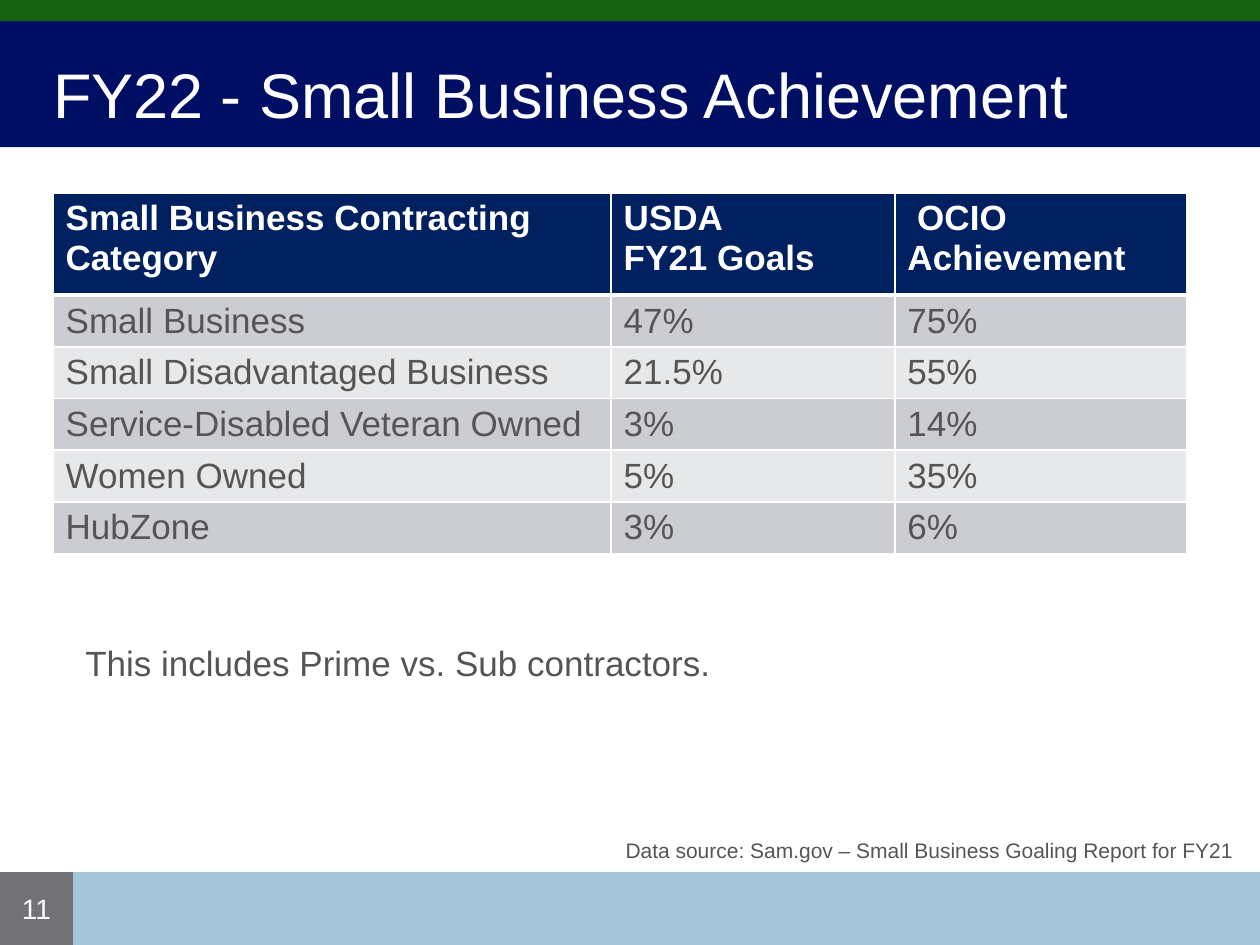
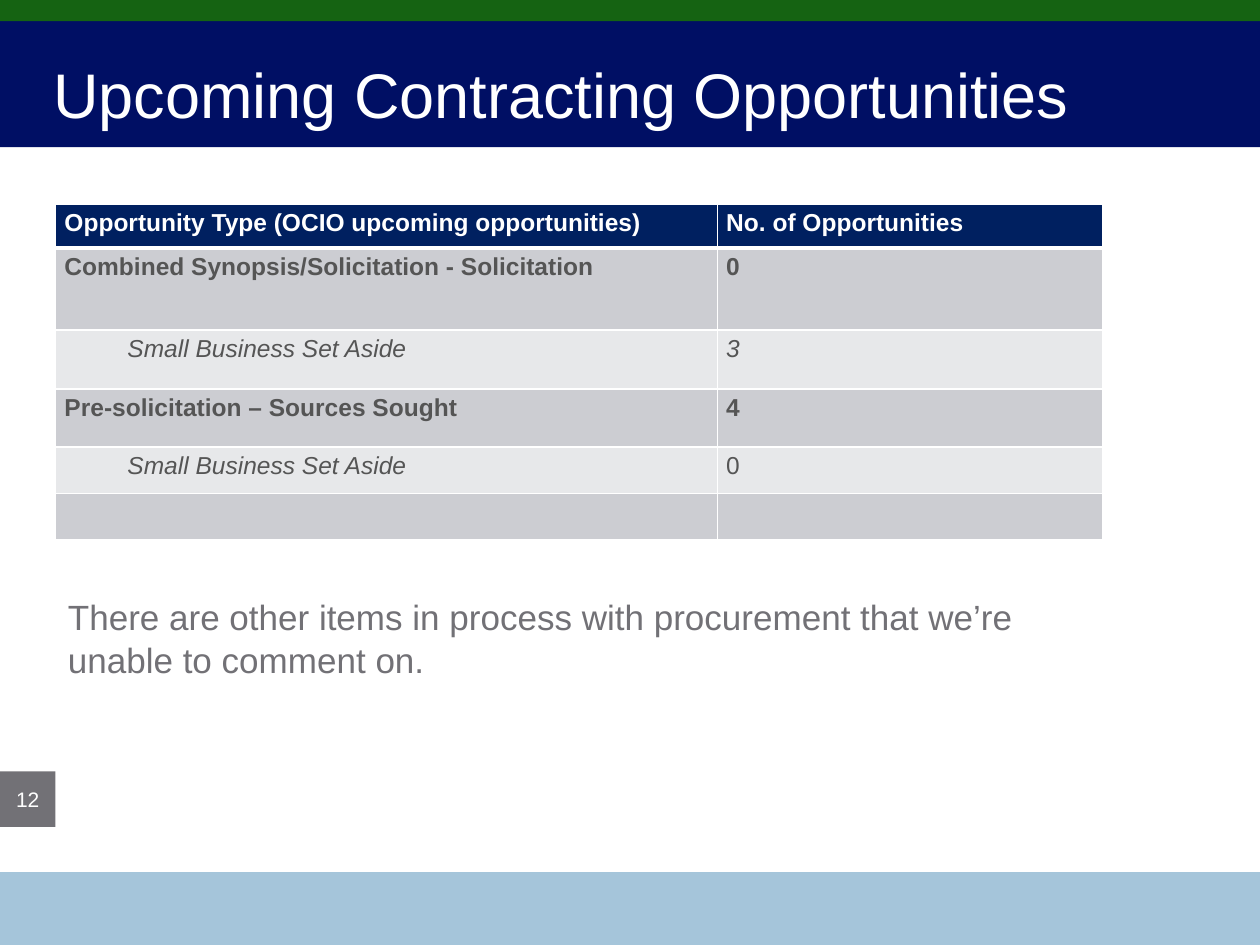
from lxml import etree
from pptx import Presentation
from pptx.dml.color import RGBColor
from pptx.enum.shapes import MSO_SHAPE as Shape
from pptx.enum.text import MSO_ANCHOR as Anchor, PP_ALIGN as Align
from pptx.oxml.ns import qn
from pptx.util import Cm, Pt

FONT = "Arial"
COLORS = {
    "white": "FFFFFF",
    "title_band": "000F64",
    "top_stripe": "156312",
    "footer_band": "A5C5DA",
    "header_row": "002060",
    "odd_row": "CCCDD2",
    "even_row": "E7E8EA",
    "table_text": "555555",
    "note_text": "545555",
    "gray": "727176",
}
PAGE_WIDTH, PAGE_HEIGHT = 25.4, 19.05
FOOTER_HEIGHT = 1.47
FOOTER_TOP = PAGE_HEIGHT - FOOTER_HEIGHT

GOALS = [
    ("Small Business Contracting Category", "USDA\nFY21 Goals", " OCIO Achievement"),
    ("Small Business", "47%", "75%"),
    ("Small Disadvantaged Business", "21.5%", "55%"),
    ("Service-Disabled Veteran Owned", "3%", "14%"),
    ("Women Owned", "5%", "35%"),
    ("HubZone", "3%", "6%"),
]
OPPORTUNITIES = [
    ("Opportunity Type (OCIO upcoming opportunities)", "No. of Opportunities"),
    ("Combined Synopsis/Solicitation - Solicitation", "0"),
    ("Small Business Set Aside", "3"),
    ("Pre-solicitation – Sources Sought", "4"),
    ("Small Business Set Aside", "0"),
    ("", ""),
]


def color(name):
    return RGBColor.from_string(COLORS[name])


def style_text(frame, size, color_name, bold=False, italic=False, align=Align.LEFT):
    for para in frame.paragraphs:
        para.alignment = align
        font = para.font
        font.name, font.size = FONT, Pt(size)
        font.bold, font.italic = bold, italic
        font.color.rgb = color(color_name)


def add_block(page, left, top, width, height, fill):
    block = page.shapes.add_shape(
        Shape.RECTANGLE, Cm(left), Cm(top), Cm(width), Cm(height))
    block.shadow.inherit = False
    block.fill.solid()
    block.fill.fore_color.rgb = color(fill)
    block.line.fill.background()
    return block


def move_bands_to_layout(page):
    """Draw the bands shared by all slides and put them behind the layout's content."""
    bands = [
        add_block(page, 0, 0, PAGE_WIDTH, 2.97, "title_band"),
        add_block(page, 0, FOOTER_TOP, PAGE_WIDTH, FOOTER_HEIGHT, "footer_band"),
        add_block(page, 0, 0, PAGE_WIDTH, 0.43, "top_stripe"),
    ]
    tree = page.slide_layout.shapes.element
    for position, band in enumerate(bands, start=2):
        tree.insert(position, band.element)


def add_page(deck, layout, title):
    page = deck.slides.add_slide(layout)
    box = page.shapes.title
    box.left, box.top, box.width, box.height = Cm(1.07), Cm(0.61), Cm(23.06), Cm(2.54)
    frame = box.text_frame
    frame.text = title
    frame.margin_left = frame.margin_right = 0
    frame.vertical_anchor = Anchor.MIDDLE
    style_text(frame, 36, "white")
    return page


def add_text(page, left, top, width, height, text, size, color_name, align=Align.LEFT):
    box = page.shapes.add_textbox(Cm(left), Cm(top), Cm(width), Cm(height))
    frame = box.text_frame
    frame.word_wrap = True
    frame.text = text
    style_text(frame, size, color_name, align=align)


def add_page_number(page, top, side, number, size):
    frame = add_block(page, 0, top, side, side, "gray").text_frame
    frame.margin_left = frame.margin_right = 0
    frame.vertical_anchor = Anchor.MIDDLE
    frame.text = number
    style_text(frame, size, "white", align=Align.CENTER)


def set_borders(cell, row):
    """White grid, thicker between the header and the first body row."""
    properties = cell._tc.get_or_add_tcPr()
    widths = {"lnL": 1, "lnR": 1,
              "lnT": 3 if row == 1 else 1,
              "lnB": 3 if row == 0 else 1}
    for side, width in widths.items():
        line = etree.SubElement(properties, qn("a:" + side), w=str(Pt(width)))
        fill = etree.SubElement(line, qn("a:solidFill"))
        etree.SubElement(fill, qn("a:srgbClr"), val=COLORS["white"])


def add_table(page, left, top, widths, heights, rows, size):
    table = page.shapes.add_table(
        len(rows), len(widths), Cm(left), Cm(top),
        Cm(sum(widths)), Cm(sum(heights))).table
    for column, width in zip(table.columns, widths):
        column.width = Cm(width)
    for index, (row, height, texts) in enumerate(zip(table.rows, heights, rows)):
        row.height = Cm(height)
        header = index == 0
        fill = "header_row" if header else "odd_row" if index % 2 else "even_row"
        for cell, text in zip(row.cells, texts):
            set_borders(cell, index)
            cell.fill.solid()
            cell.fill.fore_color.rgb = color(fill)
            cell.text = text
            style_text(cell.text_frame, size,
                       "white" if header else "table_text", bold=header)
    return table


def style_opportunities(table):
    """Tight margins, bold categories and indented italic set-asides."""
    for row_index, row in enumerate(table.rows):
        for cell in row.cells:
            cell.margin_left = cell.margin_right = Cm(0.18)
            cell.margin_top = cell.margin_bottom = Cm(0.1)
            cell.text_frame.paragraphs[0].font.bold = row_index in (0, 1, 3)
    for row_index in (2, 4):
        para = table.cell(row_index, 0).text_frame.paragraphs[0]
        para.level = 1
        para.font.italic = True
        indent = para._p.get_or_add_pPr()
        indent.set("marL", str(Cm(1.27)))
        indent.set("indent", "0")
    table.cell(2, 1).text_frame.paragraphs[0].font.italic = True


def add_achievement_page(deck, layout):
    page = add_page(deck, layout, "FY22 - Small Business Achievement")
    move_bands_to_layout(page)
    add_table(page, 1.07, 3.89, [11.25, 5.72, 5.89], [2.06] + [1.04] * 5, GOALS, 20)
    add_text(page, 1.47, 12.8, 21.89, 1.12,
             "This includes Prime vs. Sub contractors.", 20, "note_text")
    add_text(page, 3.66, 16.76, 21.46, 0.76,
             "Data source: Sam.gov – Small Business Goaling Report for FY21",
             12, "note_text", Align.RIGHT)
    add_page_number(page, FOOTER_TOP, FOOTER_HEIGHT, "11", 16)


def add_opportunities_page(deck, layout):
    page = add_page(deck, layout, "Upcoming Contracting Opportunities")
    table = add_table(page, 1.12, 4.11, [13.34, 7.77],
                      [0.89, 1.65, 1.19, 1.17, 0.94, 0.94], OPPORTUNITIES, 14)
    style_opportunities(table)
    add_text(page, 1.12, 11.89, 21.11, 1.96,
             "There are other items in process with procurement that "
             "we’re unable to comment on.", 20, "gray")
    add_page_number(page, 15.55, 1.12, "12", 12)


def main():
    deck = Presentation()
    deck.slide_width, deck.slide_height = Cm(PAGE_WIDTH), Cm(PAGE_HEIGHT)
    layout = deck.slide_layouts.get_by_name("Title Only")
    add_achievement_page(deck, layout)
    add_opportunities_page(deck, layout)
    deck.save("out.pptx")


if __name__ == "__main__":
    main()
